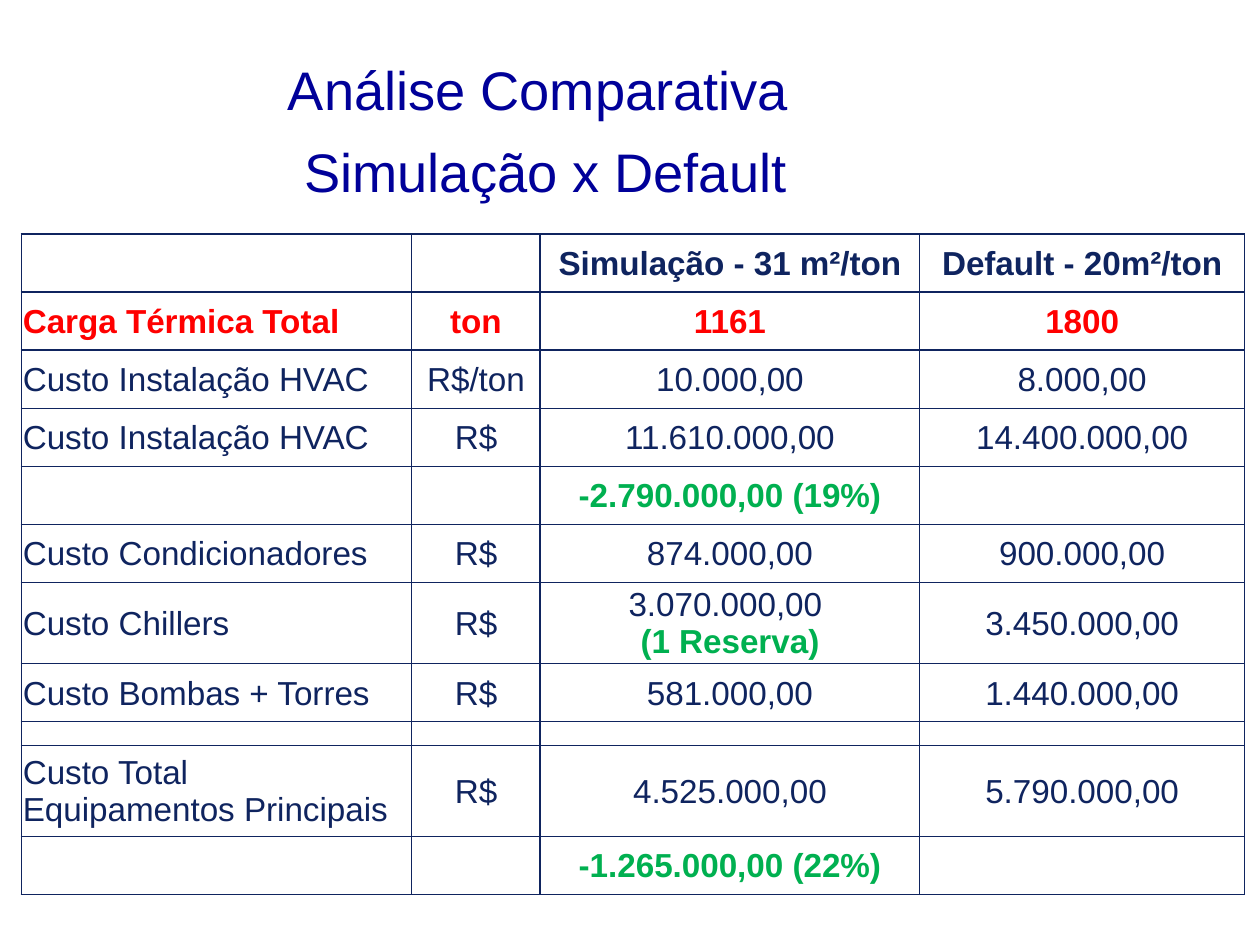
from dataclasses import dataclass

from lxml import etree
from pptx import Presentation
from pptx.dml.color import RGBColor
from pptx.enum import text
from pptx.oxml import ns
from pptx.util import Cm, Pt


@dataclass(frozen=True)
class Theme:
    font: str = "Arial"
    title: str = "000099"
    ink: str = "0F245F"
    load: str = "FF0000"
    saving: str = "00B050"
    title_size: int = 31
    cell_size: int = 19
    empty_size: int = 8
    border: float = 1


T = Theme()
CENTER, LEFT = text.PP_ALIGN.CENTER, text.PP_ALIGN.LEFT

TITLE = ["Análise Comparativa ", "Simulação x Default"]
COLS = [7.87, 2.59, 7.65, 6.55]
ROW, GAP_ROW, TOTAL_ROW = 1.17, 0.48, 1.83
ROWS = [ROW] * 8 + [GAP_ROW, TOTAL_ROW, ROW]

# Line breaks inside a cell are "\v"; separate paragraphs are "\n"
COSTS = [
    ["", "", "Simulação - 31 m²/ton", "Default - 20m²/ton"],
    ["Carga Térmica Total", "ton", "1161", "1800"],
    ["Custo Instalação HVAC", "R$/ton", "10.000,00", "8.000,00"],
    ["Custo Instalação HVAC", "R$", "11.610.000,00", "14.400.000,00"],
    ["", "", "-2.790.000,00 (19%)", ""],
    ["Custo Condicionadores", "R$", "874.000,00", "900.000,00"],
    ["Custo Chillers", "R$", "3.070.000,00 \n(1 Reserva)", "3.450.000,00"],
    ["Custo Bombas + Torres", "R$", "581.000,00", "1.440.000,00"],
    ["", "", "", ""],
    ["Custo Total\vEquipamentos Principais", "R$", "4.525.000,00", "5.790.000,00"],
    ["", "", "-1.265.000,00 (22%)", ""],
]
HEADER_ROW, LOAD_ROW = 0, 1


def write(p, content, size=T.cell_size, color=T.ink, bold=False, align=CENTER,
          spacing=None, before=None):
    p.alignment = align
    if spacing:
        p.line_spacing = spacing
    if before:
        p.space_before = Pt(before)
    for i, line in enumerate(content.split("\v")):
        if i:
            p.add_line_break()
        r = p.add_run()
        r.text = line
        r.font.name, r.font.size, r.font.bold = T.font, Pt(size), bold
        r.font.color.rgb = RGBColor.from_string(color)


def add_title(s):
    tf = s.shapes.add_textbox(Cm(1.47), Cm(0.64), Cm(19.05), Cm(2.03)).text_frame
    tf.word_wrap = True
    tf.margin_top = Cm(0.23)
    for i, line in enumerate(TITLE):
        p = tf.add_paragraph() if i else tf.paragraphs[0]
        write(p, line, size=T.title_size, color=T.title, spacing=1.2,
              before=2.4 if i else None)


def add_borders(cell):
    props = cell._tc.get_or_add_tcPr()
    for side in ("a:lnL", "a:lnR", "a:lnT", "a:lnB"):
        ln = etree.SubElement(props, ns.qn(side), w=str(Pt(T.border)))
        fill = etree.SubElement(ln, ns.qn("a:solidFill"))
        etree.SubElement(fill, ns.qn("a:srgbClr"), val=T.ink)


def cell_style(row, line):
    if row == LOAD_ROW:
        return {"color": T.load, "bold": True}
    if line.startswith(("-", "(")):
        return {"color": T.saving, "bold": True}
    return {"bold": row == HEADER_ROW}


def fill_cell(cell, row, col, content):
    cell.margin_left = cell.margin_right = cell.margin_top = Cm(0.03)
    cell.margin_bottom = 0
    cell.vertical_anchor = text.MSO_ANCHOR.MIDDLE
    add_borders(cell)
    cell.fill.background()
    tf = cell.text_frame
    if not content:
        # A small end mark keeps the narrow row from growing
        etree.SubElement(tf.paragraphs[0]._p, ns.qn("a:endParaRPr"),
                         sz=str(T.empty_size * 100))
        return
    for i, line in enumerate(content.split("\n")):
        p = tf.add_paragraph() if i else tf.paragraphs[0]
        write(p, line, align=CENTER if col else LEFT, **cell_style(row, line))


def add_cost_table(s):
    frame = s.shapes.add_table(len(ROWS), len(COLS), Cm(0.43), Cm(4.72),
                               Cm(sum(COLS)), Cm(sum(ROWS)))
    table = frame.table
    table.first_row = table.horz_banding = False
    for column, width in zip(table.columns, COLS):
        column.width = Cm(width)
    for row, height in zip(table.rows, ROWS):
        row.height = Cm(height)
    for r, values in enumerate(COSTS):
        for c, content in enumerate(values):
            fill_cell(table.cell(r, c), r, c, content)


def main():
    prs = Presentation()
    prs.slide_width, prs.slide_height = Cm(25.4), Cm(19.05)
    s = prs.slides.add_slide(prs.slide_layouts[6])
    add_title(s)
    add_cost_table(s)
    prs.save("out.pptx")


if __name__ == "__main__":
    main()
